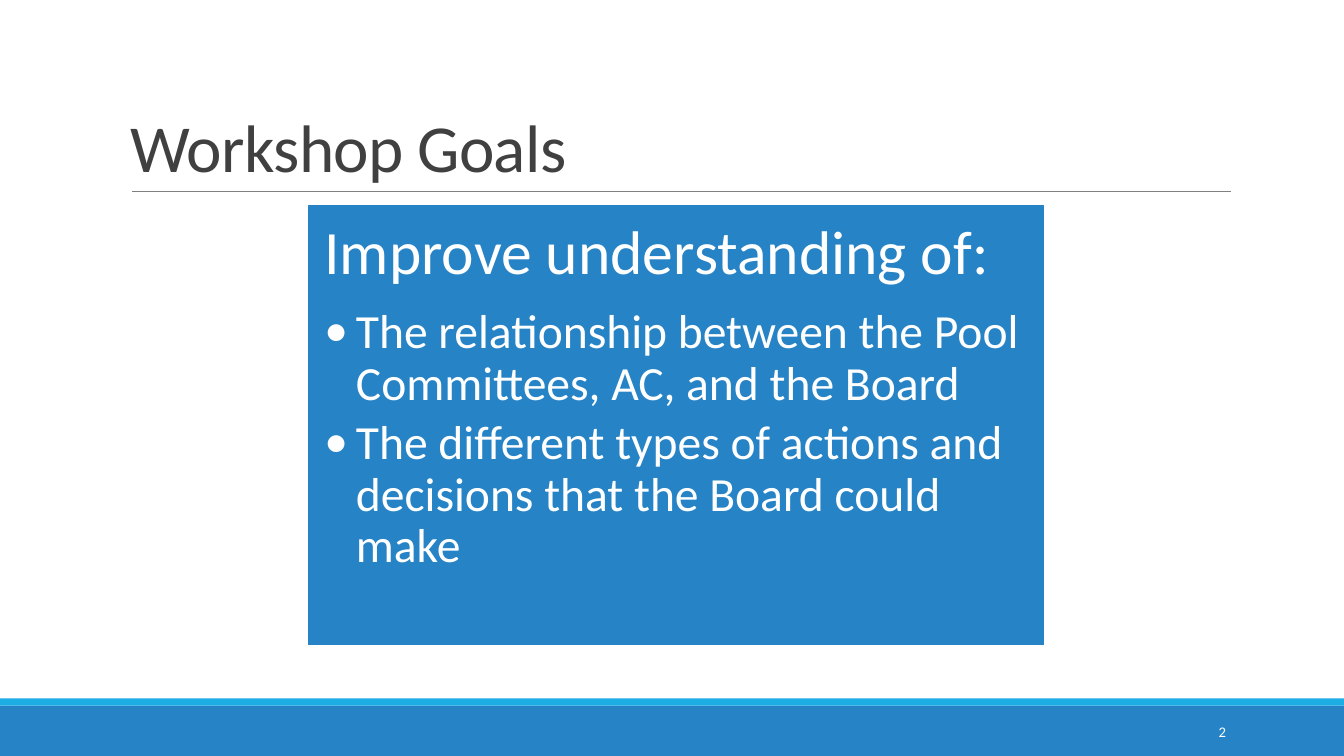
from dataclasses import dataclass

from lxml import etree
from pptx import Presentation
from pptx import util as u
from pptx.dml.color import RGBColor
from pptx.enum import shapes, text
from pptx.oxml.ns import qn

PX = 9525  # EMU per px, 96 px to the inch
SLIDE_WIDTH, SLIDE_HEIGHT = 1280, 720


@dataclass(frozen=True)
class Theme:
    font: str = "Calibri"
    blue: str = "2683C6"
    cyan: str = "1CADE4"
    dark: str = "404040"
    grey: str = "808080"
    white: str = "FFFFFF"
    title_size: float = 48
    heading_size: float = 44
    bullet_size: float = 34
    number_size: float = 10.5


THEME = Theme()


def color(value):
    return RGBColor.from_string(value)


def set_values(target, values):
    for name, value in values.items():
        setattr(target, name, value)


def emu(*lengths):
    return [u.Emu(length * PX) for length in lengths]


def add_rectangle(slide, box, fill):
    shape = slide.shapes.add_shape(shapes.MSO_SHAPE.RECTANGLE, *emu(*box))
    shape.shadow.inherit = False
    shape.fill.solid()
    shape.fill.fore_color.rgb = color(fill)
    shape.line.fill.background()
    return shape


def add_text_box(slide, box, anchor):
    shape = slide.shapes.add_textbox(*emu(*box))
    set_values(shape.text_frame, {"word_wrap": True, "vertical_anchor": anchor})
    return shape.text_frame


def write(paragraph, words, size, fill, **layout):
    run = paragraph.add_run()
    run.text = words
    set_values(run.font, {"name": THEME.font, "size": u.Pt(size)})
    run.font.color.rgb = color(fill)
    set_values(paragraph, layout)
    return run


def add_bullet(paragraph, indent):
    properties = paragraph._p.get_or_add_pPr()
    properties.set("marL", str(indent * PX))
    properties.set("indent", str(-indent * PX))
    etree.SubElement(properties, qn("a:buFont"), typeface=THEME.font)
    etree.SubElement(properties, qn("a:buChar"), char="•")


def add_title(slide, box, words):
    """Title set on the bottom of its box, with a thin rule under it."""
    left, top, width, height = box
    frame = add_text_box(slide, box, text.MSO_ANCHOR.BOTTOM)
    run = write(frame.paragraphs[0], words, THEME.title_size, THEME.dark, line_spacing=0.85)
    run._r.get_or_add_rPr().set("spc", "-50")
    rule_left, rule_y = left + 11, top + height
    rule = slide.shapes.add_connector(
        shapes.MSO_CONNECTOR.STRAIGHT, *emu(rule_left, rule_y, rule_left + 1046, rule_y))
    rule.line.color.rgb = color(THEME.grey)
    rule.line.width = u.Pt(0.5)
    etree.SubElement(rule._element.spPr, qn("a:effectLst"))


def add_goals_panel(slide, box, heading, goals):
    panel = add_rectangle(slide, box, THEME.blue)
    panel.line.color.rgb = color(THEME.white)
    panel.line.width = u.Pt(2)
    frame = panel.text_frame
    set_values(frame, {"word_wrap": True, "vertical_anchor": text.MSO_ANCHOR.TOP})
    for side in ("left", "top", "right", "bottom"):
        setattr(frame, f"margin_{side}", u.Emu(17 * PX))
    layout = {"alignment": text.PP_ALIGN.LEFT, "line_spacing": 0.9}
    write(frame.paragraphs[0], heading, THEME.heading_size, THEME.white,
          space_after=u.Pt(14), **layout)
    for goal in goals:
        paragraph = frame.add_paragraph()
        paragraph.level = 1
        add_bullet(paragraph, 30)
        write(paragraph, goal, THEME.bullet_size, THEME.white, space_after=u.Pt(6), **layout)


def add_footer(slide, box, number):
    """Blue band with a cyan stripe above it and the slide number at the right."""
    left, top, width, height = box
    stripe = 7
    add_rectangle(slide, (left, top + stripe, width, height - stripe), THEME.blue)
    add_rectangle(slide, (left, top, width, stripe), THEME.cyan)
    number_box = (left + width - 240, top + 13, 137, 38)
    frame = add_text_box(slide, number_box, text.MSO_ANCHOR.MIDDLE)
    write(frame.paragraphs[0], number, THEME.number_size, THEME.white,
          alignment=text.PP_ALIGN.RIGHT)


def main():
    presentation = Presentation()
    presentation.slide_width, presentation.slide_height = emu(SLIDE_WIDTH, SLIDE_HEIGHT)
    slide = presentation.slides.add_slide(presentation.slide_layouts[6])
    add_footer(slide, (0, 665, SLIDE_WIDTH, SLIDE_HEIGHT - 665), "2")
    add_title(slide, (115, 30, 1056, 152), "Workshop Goals")
    add_goals_panel(slide, (292, 194, 704, 422), "Improve understanding of:", [
        "The relationship between the Pool Committees, AC, and the Board",
        "The different types of actions and decisions that the Board could make",
    ])
    presentation.save("out.pptx")


if __name__ == "__main__":
    main()
